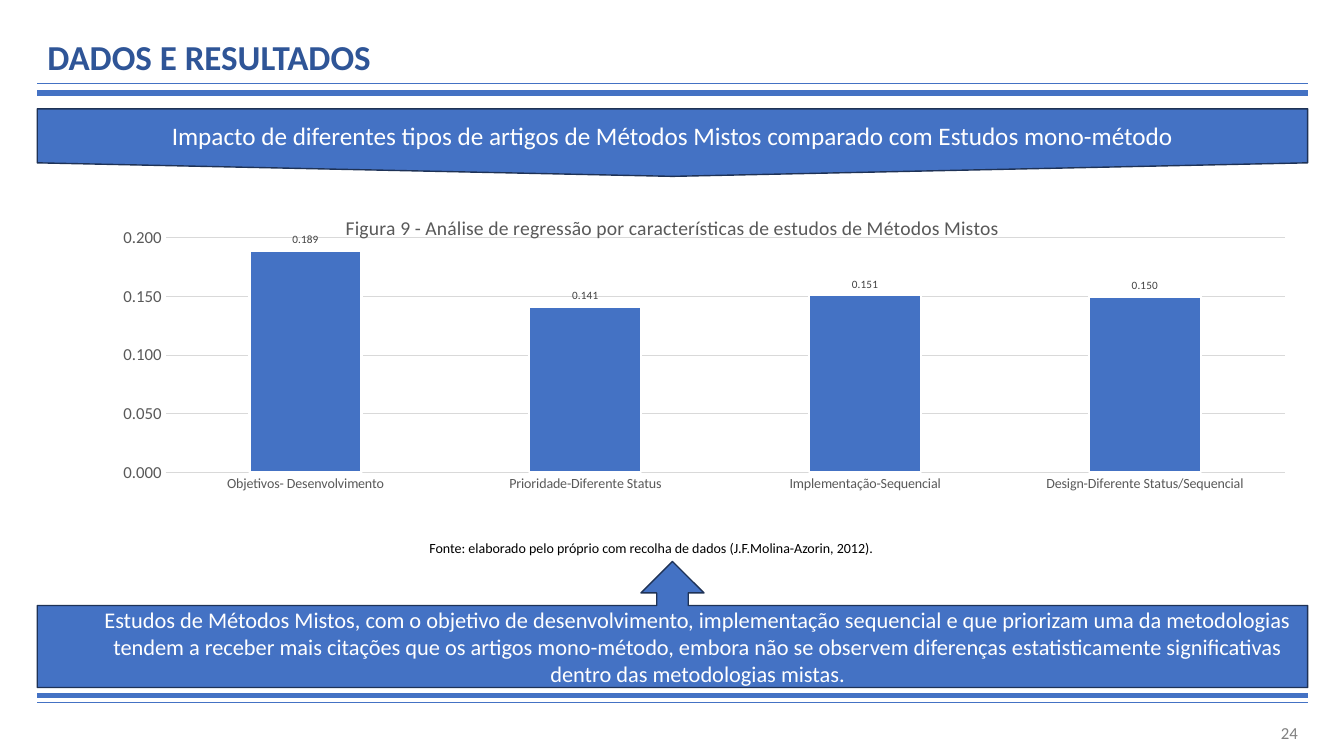
from lxml import etree
from pptx import Presentation
from pptx import util as u
from pptx.chart.data import CategoryChartData
from pptx.dml.color import RGBColor
from pptx.enum import chart as charts, shapes, text
from pptx.oxml.ns import qn

COLORS = {
    "blue": "4472C4", "navy": "1E3256", "title": "2F5597", "white": "FFFFFF",
    "black": "000000", "number": "808080", "axis": "595959", "grid": "D9D9D9",
    "label": "404040",
}
FONT = "Calibri"
LEFT, WIDTH = 0.37, 12.6
RESULTS = {
    "Objetivos- Desenvolvimento": 0.189,
    "Prioridade-Diferente Status": 0.141,
    "Implementação-Sequencial": 0.151,
    "Design-Diferente Status/Sequencial": 0.15,
}
NUMBER_FORMAT = "#,##0.000"


def color(name):
    return RGBColor.from_string(COLORS[name])


def box(left, top, width, height):
    return [u.Inches(length) for length in (left, top, width, height)]


def style_font(font, size, color_name, bold=False):
    font.name = FONT
    font.size = u.Pt(size)
    font.bold = bold
    font.color.rgb = color(color_name)


def style_line(line, color_name, width):
    line.color.rgb = color(color_name)
    line.width = u.Pt(width)


def write(shape, words, size, color_name, align, anchor, bold=False):
    frame = shape.text_frame
    frame.word_wrap = True
    frame.vertical_anchor = anchor
    frame.text = words
    paragraph = frame.paragraphs[0]
    paragraph.alignment = align
    style_font(paragraph.runs[0].font, size, color_name, bold)
    return paragraph


def add_title(slide, words):
    title = slide.shapes.title
    title.left, title.top, title.width, title.height = box(LEFT, 0.37, 10, 0.45)
    paragraph = write(title, words, 25, "title", text.PP_ALIGN.LEFT,
                      text.MSO_ANCHOR.BOTTOM, bold=True)
    paragraph.line_spacing = 0.9
    title.text_frame.auto_size = text.MSO_AUTO_SIZE.NONE


def add_rule(slide, top, width):
    rule = slide.shapes.add_connector(
        shapes.MSO_CONNECTOR.STRAIGHT, u.Inches(LEFT), u.Inches(top),
        u.Inches(LEFT + WIDTH), u.Inches(top))
    style_line(rule.line, "blue", width)
    etree.SubElement(rule.line._get_or_add_ln().getparent(), qn("a:effectLst"))


def add_banner(slide, kind, top, height, words, size):
    banner = slide.shapes.add_shape(kind, *box(LEFT, top, WIDTH, height))
    banner.shadow.inherit = False
    banner.fill.solid()
    banner.fill.fore_color.rgb = color("blue")
    style_line(banner.line, "navy", 1)
    return write(banner, words, size, "white", text.PP_ALIGN.CENTER,
                 text.MSO_ANCHOR.MIDDLE)


def add_note(slide, place, words, size, color_name, align, anchor):
    note = slide.shapes.add_textbox(*box(*place))
    write(note, words, size, color_name, align, anchor)


def set_layout(parent, after, **settings):
    for old in parent.findall(qn("c:layout")):
        parent.remove(old)
    layout = etree.Element(qn("c:layout"))
    manual = etree.SubElement(layout, qn("c:manualLayout"))
    for name, value in settings.items():
        etree.SubElement(manual, qn("c:" + name)).set("val", str(value))
    if after is None:
        parent.insert(0, layout)
    else:
        after.addnext(layout)


def style_axis(axis, size):
    axis.major_tick_mark = axis.minor_tick_mark = charts.XL_TICK_MARK.NONE
    style_font(axis.tick_labels.font, size, "axis")


def add_regression_chart(slide):
    data = CategoryChartData(number_format=NUMBER_FORMAT)
    data.categories = list(RESULTS)
    data.add_series("Series 1", list(RESULTS.values()))
    chart = slide.shapes.add_chart(
        charts.XL_CHART_TYPE.COLUMN_CLUSTERED, *box(LEFT, 1.93, WIDTH, 3.19), data).chart
    style_font(chart.font, 10, "black")
    chart.has_legend = False

    chart.has_title = True
    title = chart.chart_title
    title.text_frame.text = ("Figura 9 - Análise de regressão por características "
                             "de estudos de Métodos Mistos")
    style_font(title.text_frame.paragraphs[0].runs[0].font, 14, "axis")
    title_xml = title._element
    set_layout(title_xml, title_xml.find(qn("c:tx")),
               xMode="edge", yMode="edge", x=0.24, y=0.05)

    style_axis(chart.category_axis, 10)
    style_line(chart.category_axis.format.line, "grid", 0.75)
    values = chart.value_axis
    style_axis(values, 12)
    values.format.line.fill.background()
    values.minimum_scale, values.maximum_scale, values.major_unit = 0, 0.2, 0.05
    values.tick_labels.number_format = NUMBER_FORMAT
    values.tick_labels.number_format_is_linked = False
    style_line(values.major_gridlines.format.line, "grid", 0.75)

    plot = chart.plots[0]
    plot.gap_width = 150
    plot.vary_by_categories = False
    series = plot.series[0]
    series.format.fill.solid()
    series.format.fill.fore_color.rgb = color("blue")
    style_line(series.format.line, "white", 1.5)
    labels = series.data_labels
    labels.show_value = True
    labels.position = charts.XL_LABEL_POSITION.OUTSIDE_END
    labels.number_format = NUMBER_FORMAT
    labels.number_format_is_linked = False
    style_font(labels.font, 8, "label")

    plot_area = chart._chartSpace.find(".//" + qn("c:plotArea"))
    set_layout(plot_area, None, layoutTarget="inner", xMode="edge", yMode="edge",
               x=0.101, y=0.135, w=0.881, h=0.729)


def main():
    presentation = Presentation()
    presentation.slide_width = u.Inches(13.33)
    presentation.slide_height = u.Inches(7.5)
    slide = presentation.slides.add_slide(presentation.slide_layouts[5])

    add_title(slide, "DADOS E RESULTADOS")
    for top, width in ((0.83, 0.5), (0.92, 4.25), (6.9, 4.25), (6.97, 0.5)):
        add_rule(slide, top, width)
    add_banner(slide, shapes.MSO_SHAPE.FLOWCHART_OFFPAGE_CONNECTOR, 1.08, 0.67,
               "Impacto de diferentes tipos de artigos de Métodos Mistos "
               "comparado com Estudos mono-método", 18)
    add_regression_chart(slide)
    conclusion = add_banner(
        slide, shapes.MSO_SHAPE.UP_ARROW_CALLOUT, 5.57, 1.25,
        "Estudos de Métodos Mistos, com o objetivo de desenvolvimento, implementação "
        "sequencial e que priorizam uma da metodologias tendem a receber mais citações "
        "que os artigos mono-método, embora não se observem diferenças estatisticamente "
        "significativas dentro das metodologias mistas.", 16)
    conclusion.level = 1
    conclusion._p.get_or_add_pPr().set("marL", str(u.Inches(0.5)))
    add_note(slide, (4.16, 5.3, 5.01, 0.27),
             "Fonte: elaborado pelo próprio com recolha de dados (J.F.Molina-Azorin, 2012).",
             10, "black", text.PP_ALIGN.LEFT, text.MSO_ANCHOR.TOP)
    add_note(slide, (12.26, 7.06, 0.71, 0.41), "24", 12, "number",
             text.PP_ALIGN.RIGHT, text.MSO_ANCHOR.MIDDLE)
    presentation.save("out.pptx")


if __name__ == "__main__":
    main()
